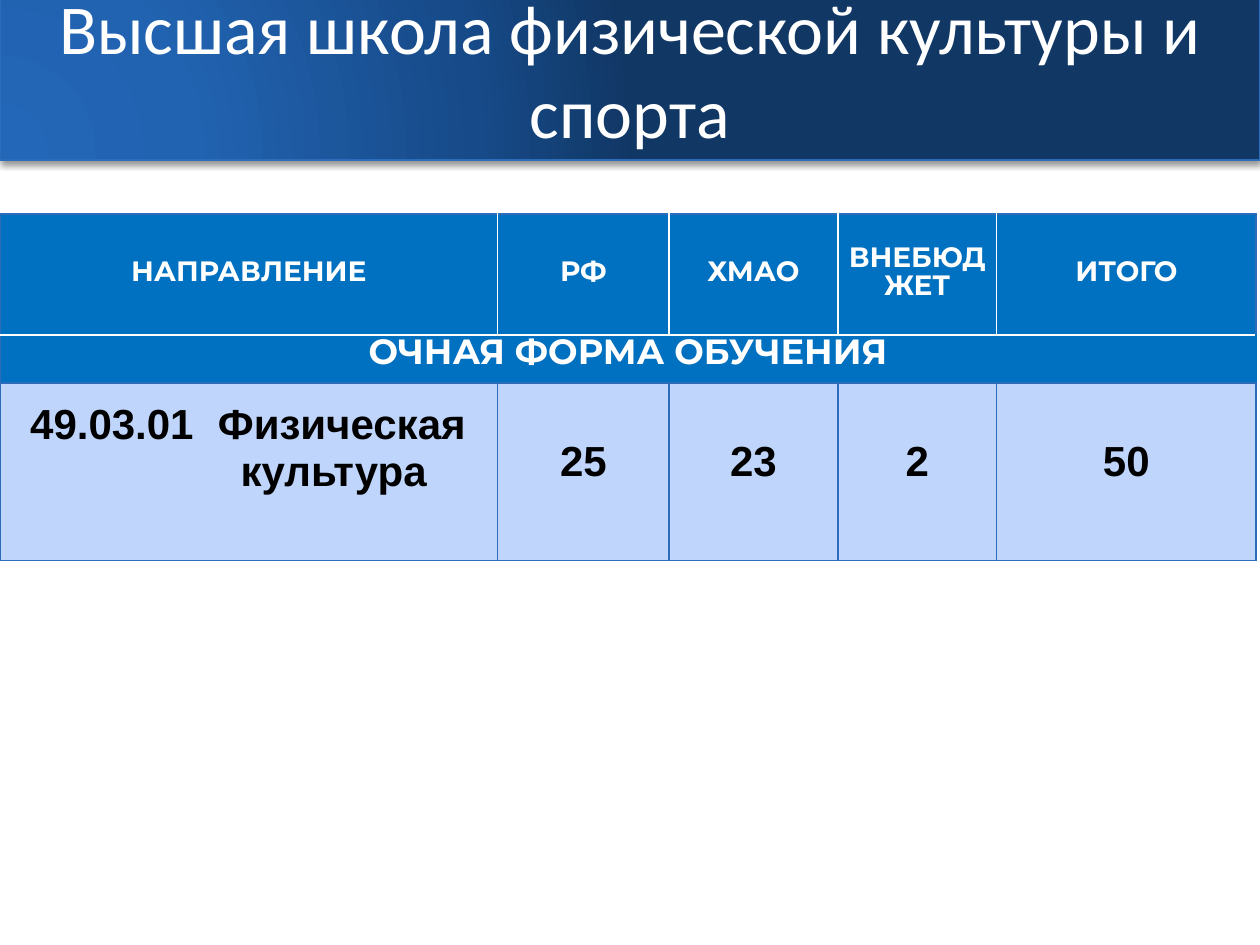
from dataclasses import dataclass

import lxml.etree
import pptx
import pptx.dml.color
import pptx.enum.shapes
import pptx.enum.text
import pptx.oxml
import pptx.oxml.ns
import pptx.util

BLUE, WHITE, BLACK = "2C6CB9", "FFFFFF", "000000"
HEADER_FILL, BODY_FILL = "0070C0", "C0D5FB"
CENTER = pptx.enum.text.PP_ALIGN.CENTER
MIDDLE = pptx.enum.text.MSO_ANCHOR.MIDDLE
inch = pptx.util.Inches


@dataclass
class RowStyle:
    height: float
    fill: str
    top: str
    bottom: str
    inner: str  # colour of the lines between columns
    font: str
    size: float
    color: str


COLUMNS = [3.95, 1.36, 1.34, 1.26, 2.06]
HEADINGS = ["НАПРАВЛЕНИЕ", "РФ", "ХМАО", "ВНЕБЮДЖЕТ", "ИТОГО"]
PLACES = ["25", "23", "2", "50"]
HEADER = RowStyle(0.96, HEADER_FILL, BLUE, WHITE, WHITE, "Montserrat", 16, WHITE)
SECTION = RowStyle(0.38, HEADER_FILL, WHITE, BLUE, HEADER_FILL, "Montserrat", 20, WHITE)
BODY = RowStyle(1.41, BODY_FILL, BLUE, BLUE, BLUE, "Arial", 24, BLACK)
ROWS = [HEADER, SECTION, BODY]


def rgb(value: str):
    return pptx.dml.color.RGBColor.from_string(value)


def add_xml(parent, xml: str):
    ns = pptx.oxml.ns.nsdecls("a")
    head, rest = xml.split(">", 1)
    slash = "/" if head.endswith("/") else ""
    child = pptx.oxml.parse_xml(f"{head.rstrip('/')} {ns}{slash}>{rest}")
    parent.append(child)
    return child


def write(p, text: str, *, font: str, size: float, color: str, bold=False,
          align=None, line=None, left=None, indent=0.0):
    """Put formatted text in a paragraph."""
    if left is not None:
        ppr = p._p.get_or_add_pPr()
        ppr.set("marL", str(inch(left)))
        ppr.set("indent", str(inch(indent)))
    p.alignment = align
    if line:
        p.line_spacing = pptx.util.Pt(line)
    r = p.add_run()
    r.text = text
    r.font.name, r.font.size, r.font.bold = font, pptx.util.Pt(size), bold
    r.font.color.rgb = rgb(color)


def write_cell(cell, text: str, style: RowStyle):
    write(cell.text_frame.paragraphs[0], text, font=style.font, size=style.size,
          color=style.color, bold=True, align=CENTER, line=15.8)


def style_cell(cell, style: RowStyle, first: bool, last: bool):
    cell.margin_left = cell.margin_right = inch(0.06)
    cell.margin_top = cell.margin_bottom = 0
    cell.vertical_anchor = MIDDLE
    borders = {"lnL": BLUE if first else style.inner,
               "lnR": BLUE if last else style.inner,
               "lnT": style.top, "lnB": style.bottom}
    for side, color in borders.items():
        add_xml(cell._tc.get_or_add_tcPr(),
                f'<a:{side} w="12700"><a:solidFill><a:srgbClr val="{color}"/>'
                f'</a:solidFill></a:{side}>')
    cell.fill.solid()
    cell.fill.fore_color.rgb = rgb(style.fill)


def add_banner(s, text: str):
    sp = s.shapes.add_shape(pptx.enum.shapes.MSO_SHAPE.RECTANGLE,
                            0, inch(-0.18), inch(10), inch(1.45))
    sp.line.color.rgb = rgb(BLUE)
    sp.line.width = pptx.util.Pt(1)
    # Radial gradient
    stops = [(0, "2367B8"), (30, "2263B1"), (75, "164A88"), (100, "113765")]
    gs = "".join(f'<a:gs pos="{pos * 1000}"><a:srgbClr val="{color}"/></a:gs>'
                 for pos, color in stops)
    grad = add_xml(sp._element.spPr,
                   f'<a:gradFill rotWithShape="1"><a:gsLst>{gs}</a:gsLst>'
                   '<a:path path="circle"><a:fillToRect l="5000" t="100000" '
                   'r="120000" b="10000"/></a:path></a:gradFill>')
    sp._element.spPr.find(pptx.oxml.ns.qn("a:prstGeom")).addnext(grad)
    # Soft shadow below
    sp.shadow.inherit = False
    add_xml(sp._element.spPr.find(pptx.oxml.ns.qn("a:effectLst")),
            '<a:outerShdw blurRad="50800" dist="20320" dir="5400000" rotWithShape="0">'
            '<a:srgbClr val="000000"><a:alpha val="42000"/></a:srgbClr></a:outerShdw>')
    tf = sp.text_frame
    tf.word_wrap, tf.vertical_anchor = True, MIDDLE
    write(tf.paragraphs[0], text, font="Calibri", size=40, color=WHITE, align=CENTER)


def add_places_table(s):
    table = s.shapes.add_table(len(ROWS), len(COLUMNS), 0, inch(1.7),
                               inch(sum(COLUMNS)),
                               inch(sum(row.height for row in ROWS))).table
    table.first_row = table.horz_banding = False
    for column, width in zip(table.columns, COLUMNS):
        column.width = inch(width)
    for i, style in enumerate(ROWS):
        table.rows[i].height = inch(style.height)
        for j in range(len(COLUMNS)):
            style_cell(table.cell(i, j), style, j == 0, j == len(COLUMNS) - 1)

    # Column headings and the section row
    for j, heading in enumerate(HEADINGS):
        write_cell(table.cell(0, j), heading, HEADER)
    table.cell(1, 0).merge(table.cell(1, len(COLUMNS) - 1))
    write_cell(table.cell(1, 0), "ОЧНАЯ ФОРМА ОБУЧЕНИЯ", SECTION)

    # Programme name: the code hangs to the left of the first line
    name = table.cell(2, 0)
    name.margin_bottom = inch(0.37)
    tf = name.text_frame
    body = dict(font=BODY.font, size=BODY.size, color=BODY.color, bold=True)
    write(tf.paragraphs[0], "49.03.01\tФизическая", left=1.67, indent=-1.49, **body)
    write(tf.add_paragraph(), "культура", left=1.85, **body)
    for j, places in enumerate(PLACES, start=1):
        write_cell(table.cell(2, j), places, BODY)


def main():
    prs = pptx.Presentation()
    prs.slide_width, prs.slide_height = inch(10), inch(7.5)
    s = prs.slides.add_slide(prs.slide_layouts[6])
    add_banner(s, "Высшая школа физической культуры и спорта")
    add_places_table(s)
    prs.save("out.pptx")


if __name__ == "__main__":
    main()
